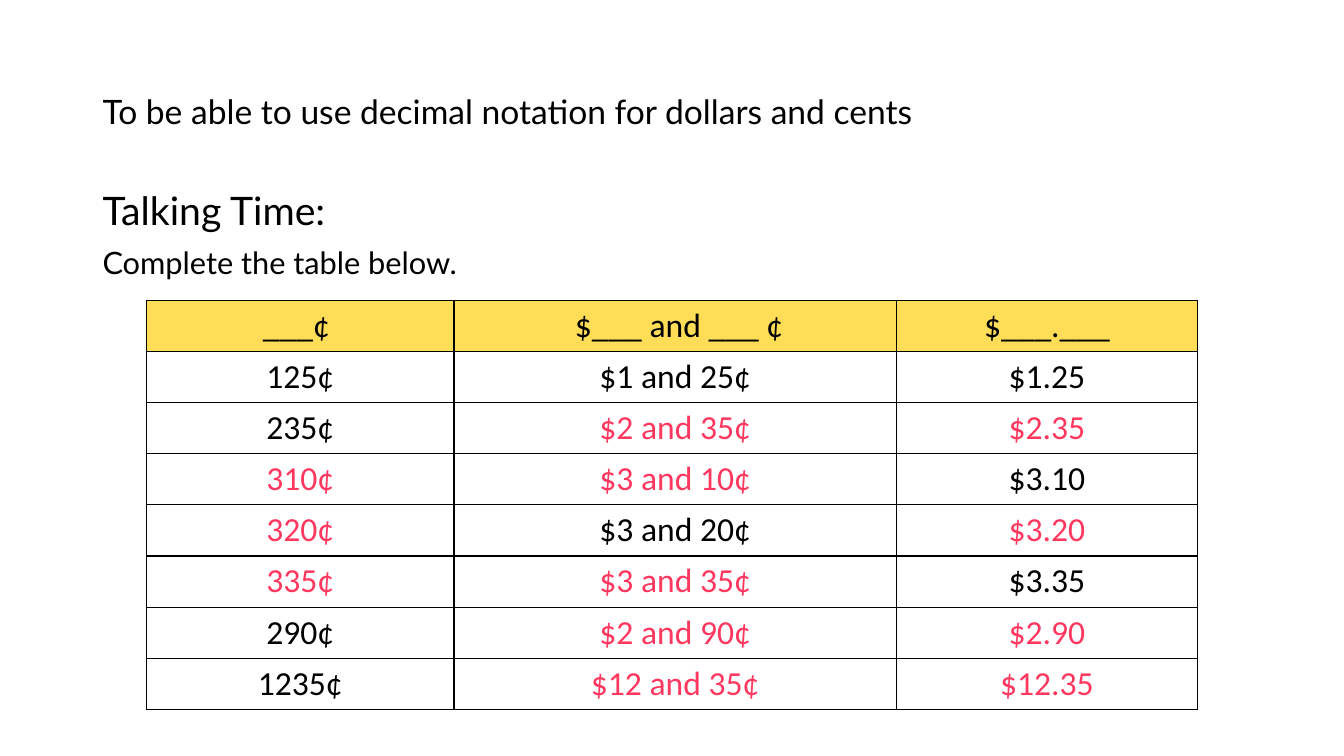
from dataclasses import dataclass

from lxml.etree import SubElement
from pptx import Presentation
from pptx.dml.color import RGBColor
from pptx.enum.text import MSO_ANCHOR, PP_ALIGN
from pptx.oxml import parse_xml
from pptx.oxml.ns import nsdecls, qn
from pptx.util import Cm, Pt


@dataclass(frozen=True)
class Theme:
    """Hold the colours, fonts and type sizes of the slide."""
    ink: str = "000000"
    answer: str = "FF3860"
    head: str = "FFDD57"
    paper: str = "FFFFFF"
    prose: str = "Lato"
    grid: str = "Calibri"
    title: int = 24
    lead: int = 28
    task: int = 22
    cell: int = 24


THEME = Theme()
HEADS = ["___¢ ", " $___ and ___ ¢", "$___.___"]
WIDTHS = [7.75, 11.15, 7.59]
GIVEN = [(125, {0, 1, 2}), (235, {0}), (310, {2}), (320, {1}),
         (335, {2}), (290, {0}), (1235, {0})]


def style(para, face, size, color=THEME.ink):
    """Set the font of a whole paragraph."""
    para.font.name = face
    para.font.size = Pt(size)
    para.font.color.rgb = RGBColor.from_string(color)


def place(shape, left, top, width, height):
    """Move a placeholder to a spot given in centimetres."""
    shape.left, shape.top = Cm(left), Cm(top)
    shape.width, shape.height = Cm(width), Cm(height)


def add_title(slide, text):
    """Fill the title placeholder."""
    title = slide.shapes.title
    place(title, 2.33, 1.02, 24.38, 3.68)
    frame = title.text_frame
    frame.text = text
    frame.vertical_anchor = MSO_ANCHOR.MIDDLE
    para = frame.paragraphs[0]
    para.alignment = PP_ALIGN.LEFT
    para.line_spacing = 0.9
    style(para, THEME.prose, THEME.title)


def add_body(slide, lines):
    """Fill the body placeholder with plain lines of text and size."""
    body = slide.placeholders[1]
    place(body, 2.33, 4.7, 30.55, 12.1)
    frame = body.text_frame
    frame.text = "\n".join(text for text, size in lines)
    for i, (para, (text, size)) in enumerate(zip(frame.paragraphs, lines)):
        para.line_spacing = 0.9
        para.space_before = Pt(10 if i else 0)
        props = para._p.get_or_add_pPr()
        props.set("marL", "0")
        props.set("indent", "0")
        SubElement(props, qn("a:buNone"))
        style(para, THEME.prose, size)


def add_edges(cell):
    """Draw a thin line on each side of a cell."""
    props = cell._tc.get_or_add_tcPr()
    for i, side in enumerate("LRTB"):
        props.insert(i, parse_xml(
            f'<a:ln{side} {nsdecls("a")} w="{Pt(1)}"><a:solidFill>'
            f'<a:srgbClr val="{THEME.ink}"/></a:solidFill></a:ln{side}>'))


def fill_cell(cell, text, color, back):
    """Write centred text in a filled and bordered cell."""
    cell.text = text
    cell.vertical_anchor = MSO_ANCHOR.MIDDLE
    cell.fill.solid()
    cell.fill.fore_color.rgb = RGBColor.from_string(back)
    para = cell.text_frame.paragraphs[0]
    para.alignment = PP_ALIGN.CENTER
    style(para, THEME.grid, THEME.cell, color)
    add_edges(cell)


def forms(cents):
    """Write a sum in cents, in words and in decimal notation."""
    whole, part = divmod(cents, 100)
    return [f"{cents}¢", f"${whole} and {part}¢", f"${whole}.{part:02}"]


def add_money(slide):
    """Add the table of sums, with answers in their own colour."""
    count = len(GIVEN) + 1
    table = slide.shapes.add_table(
        count, len(HEADS), Cm(3.69), Cm(7.57),
        Cm(sum(WIDTHS)), Cm(1.28 * count)).table
    for col, width in zip(table.columns, WIDTHS):
        col.width = Cm(width)
    for i, text in enumerate(HEADS):
        fill_cell(table.cell(0, i), text, THEME.ink, THEME.head)
    for row, (cents, given) in enumerate(GIVEN, 1):
        for i, text in enumerate(forms(cents)):
            color = THEME.ink if i in given else THEME.answer
            fill_cell(table.cell(row, i), text, color, THEME.paper)


def main():
    """Build and save the slide."""
    deck = Presentation()
    deck.slide_width, deck.slide_height = Cm(33.87), Cm(19.05)
    slide = deck.slides.add_slide(deck.slide_layouts[1])
    add_title(slide, "To be able to use decimal notation for dollars and cents")
    add_body(slide, [("Talking Time:", THEME.lead),
                     ("Complete the table below.", THEME.task)])
    add_money(slide)
    deck.save("out.pptx")


if __name__ == "__main__":
    main()
